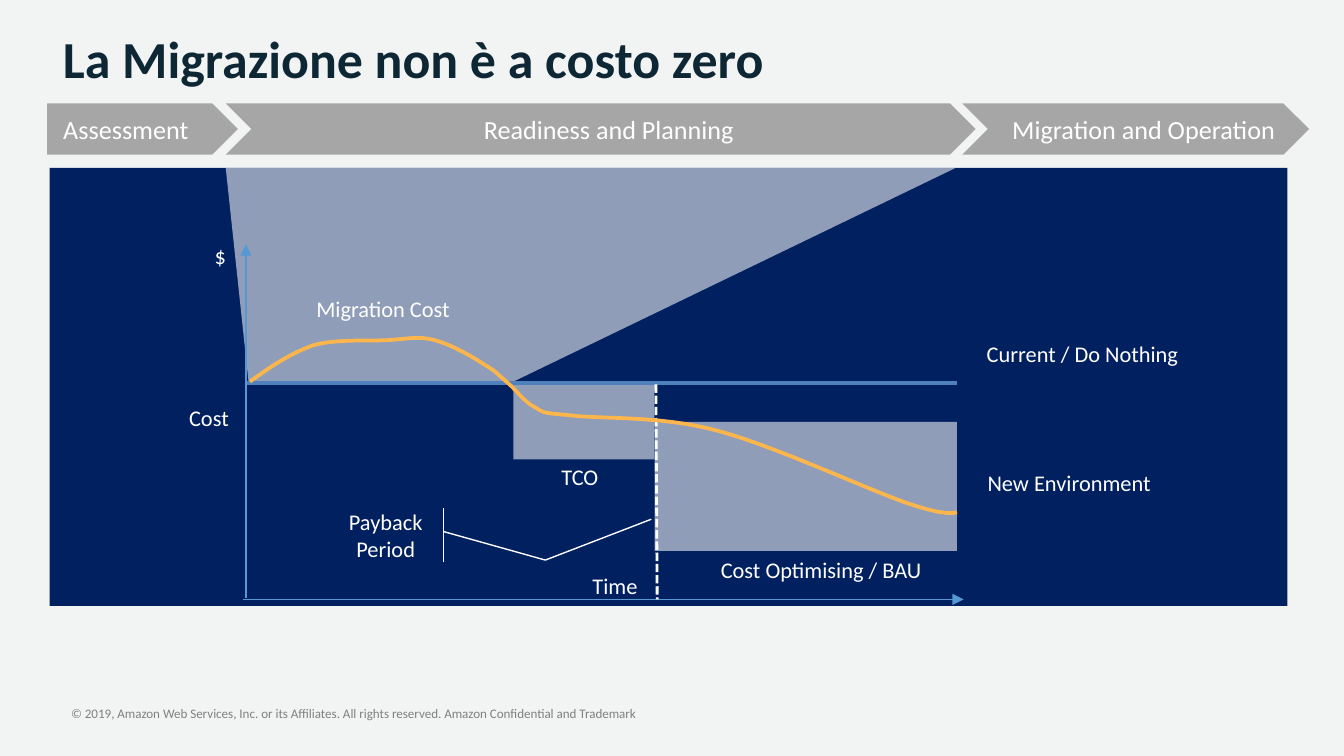
from dataclasses import dataclass

from lxml import etree
from pptx import Presentation
from pptx.dml.color import RGBColor
from pptx.enum.dml import MSO_LINE
from pptx.enum.shapes import MSO_CONNECTOR, MSO_SHAPE
from pptx.enum.text import MSO_ANCHOR, PP_ALIGN
from pptx.oxml.ns import qn
from pptx.util import Inches, Pt

LEFT, CENTER = PP_ALIGN.LEFT, PP_ALIGN.CENTER
TOP, MIDDLE = MSO_ANCHOR.TOP, MSO_ANCHOR.MIDDLE
RECT, PENTAGON, CHEVRON = MSO_SHAPE.RECTANGLE, MSO_SHAPE.PENTAGON, MSO_SHAPE.CHEVRON
CALLOUT = MSO_SHAPE.LINE_CALLOUT_2_ACCENT_BAR
STRAIGHT = MSO_CONNECTOR.STRAIGHT
DASHED = MSO_LINE.SQUARE_DOT
COLUMNS = 100
WIDTH = Inches(10)
CELL = WIDTH // COLUMNS


@dataclass(frozen=True)
class Theme:
    """Colours, type sizes and the font of the slide."""
    font: str = "Calibri"
    back: str = "F2F4F4"
    title: str = "0E2735"
    navy: str = "002060"
    white: str = "FFFFFF"
    stage: str = "A6A6A6"
    axis: str = "5698D3"
    baseline: str = "4F81BD"
    curve: str = "FCB64C"
    footer: str = "808080"
    title_size: float = 27.8
    stage_size: float = 14
    label_size: float = 12
    footer_size: float = 7
    veil: int = 56


T = Theme()


@dataclass(frozen=True)
class Box:
    """A region measured in grid cells."""
    x: float
    y: float
    w: float
    h: float

    def point(self, x, y):
        """Return a point of the region in slide units."""
        return round((self.x + x) * CELL), round((self.y + y) * CELL)

    def area(self, x=0, y=0, w=None, h=None):
        """Return an area of the region in slide units, by default all of it."""
        w, h = w or self.w, h or self.h
        return (*self.point(x, y), round(w * CELL), round(h * CELL))


def write(sp, text, size=T.label_size, color=T.white, bold=False, align=CENTER,
          anchor=TOP, wrap=False, margins=(0.1, 0.05, 0.1, 0.05)):
    """Put formatted text in a shape."""
    tf = sp.text_frame
    tf.word_wrap, tf.vertical_anchor = wrap, anchor
    tf.margin_left, tf.margin_top, tf.margin_right, tf.margin_bottom = map(Inches, margins)
    p = tf.paragraphs[0]
    p.alignment = align
    r = p.add_run()
    r.text = text
    r.font.name, r.font.size, r.font.bold = T.font, Pt(size), bold
    r.font.color.rgb = RGBColor.from_string(color)


def style(sp, fill=None, opacity=None, line=None, width=1):
    """Set the fill and outline of a shape without shadow."""
    sp.shadow.inherit = False
    if fill:
        sp.fill.solid()
        sp.fill.fore_color.rgb = RGBColor.from_string(fill)
        if opacity:
            color = next(sp.fill._xPr.iter(qn("a:srgbClr")))
            etree.SubElement(color, qn("a:alpha"), val=str(opacity * 1000))
    else:
        sp.fill.background()
    if line:
        sp.line.color.rgb = RGBColor.from_string(line)
        sp.line.width = Pt(width)
    else:
        sp.line.fill.background()
    return sp


def add_line(s, start, end, color, width, arrow=False, dash=None):
    """Draw a straight line, with an arrowhead at its end if wanted."""
    c = s.shapes.add_connector(STRAIGHT, *start, *end)
    c.line.color.rgb = RGBColor.from_string(color)
    c.line.width = Pt(width)
    if dash:
        c.line.dash_style = dash
    if arrow:
        etree.SubElement(c.line._get_or_add_ln(), qn("a:tailEnd"), type="triangle")
    etree.SubElement(c._element.spPr, qn("a:effectLst"))


def add_outline(s, points, close):
    """Draw a freeform through the given points."""
    fb = s.shapes.build_freeform(*points[0])
    fb.add_line_segments(points[1:], close=close)
    return fb.convert_to_shape()


def add_curve(s, points, color, width):
    """Draw a Bezier curve from a start and triples of control points."""
    sp = style(add_outline(s, points, False), line=color, width=width)
    steps = list(sp._element.iter(qn("a:lnTo")))
    for i in range(0, len(steps), 3):
        bezier = etree.Element(qn("a:cubicBezTo"))
        steps[i].addprevious(bezier)
        for step in steps[i:i + 3]:
            bezier.append(step[0])
            step.getparent().remove(step)


def add_title(s, box):
    """Write the heading."""
    write(s.shapes.add_textbox(*box.area()), "La Migrazione non è a costo zero",
          size=T.title_size, color=T.title, bold=True, align=LEFT, anchor=MIDDLE, wrap=True)


def add_stages(s, box):
    """Draw the row of migration stages."""
    stages = [
        ("Assessment", PENTAGON, 0, 14.2, LEFT, 0.12),
        ("Readiness and Planning", CHEVRON, 13.3, 55.8, CENTER, 0.22),
        ("Migration and Operation", CHEVRON, 68.1, 25.8, CENTER, 0.22),
    ]
    for text, kind, x, w, align, inset in stages:
        sp = style(s.shapes.add_shape(kind, *box.area(x, 0, w)), fill=T.stage)
        write(sp, text, size=T.stage_size, align=align, anchor=MIDDLE,
              margins=(inset, 0.05, 0.1, 0.05))


def add_areas(s, box):
    """Draw the panel and its translucent areas."""
    style(s.shapes.add_shape(RECT, *box.area()), fill=T.navy)
    funnel = [box.point(*xy) for xy in [(13.1, 0), (67.4, 0), (34.5, 15.9), (14.8, 15.9)]]
    areas = [add_outline(s, funnel, True)]
    for area in [(34.5, 16.1, 10.5, 5.6), (45, 18.9, 22.5, 9.6)]:
        areas.append(s.shapes.add_shape(RECT, *box.area(*area)))
    for sp in areas:
        style(sp, fill=T.white, opacity=T.veil)


def add_lines(s, box):
    """Draw the axes, the current cost, the payback date and the cost curve."""
    at = box.point
    add_line(s, at(14.6, 32), at(14.6, 5.7), T.axis, 0.75, arrow=True)
    add_line(s, at(14.4, 32.1), at(68, 32.1), T.axis, 0.75, arrow=True)
    add_line(s, at(14.7, 16), at(67.5, 16), T.baseline, 2)
    add_line(s, at(45.1, 16.1), at(45.2, 32.1), T.white, 1.5, dash=DASHED)
    curve = [
        (14.9, 15.9),
        (16.4, 14.8), (17.9, 13.8), (19.6, 13.2),
        (21.3, 12.7), (23.8, 12.9), (25.3, 12.8),
        (26.8, 12.7), (27.4, 12.5), (28.6, 12.8),
        (29.8, 13.1), (31.4, 14), (32.3, 14.6),
        (33.2, 15.1), (33.5, 15.5), (34.1, 16),
        (34.8, 16.6), (35.3, 17.4), (36.1, 17.8),
        (36.8, 18.2), (36.4, 18.2), (38.7, 18.4),
        (40.9, 18.7), (45.3, 18.4), (49.5, 19.5),
        (53.8, 20.6), (61, 24), (64, 25),
        (67, 26), (67.5, 25.6), (67.5, 25.6),
    ]
    add_curve(s, [at(*xy) for xy in curve], T.curve, 2)


def add_labels(s, box):
    """Write the chart labels and the payback callout."""
    labels = [
        ("$", 11.2, 5, 3),
        ("Migration Cost", 18.2, 9, 13.2),
        ("Current / Do Nothing", 67.4, 12.3, 18.9),
        ("Cost", 9.1, 17.1, 5.5),
        ("TCO", 36.8, 21.5, 5.3),
        ("New Environment", 67.9, 21.9, 15.9),
        ("Cost Optimising / BAU", 47.8, 28.4, 19.2),
        ("Time", 39.1, 29.6, 5.9),
    ]
    for text, x, y, w in labels:
        write(s.shapes.add_textbox(*box.area(x, y, w, 3)), text)
    sp = style(s.shapes.add_shape(CALLOUT, *box.area(19.6, 25.3, 10.8, 4)),
               line=T.white, width=0.75)
    for i, share in enumerate([0.44, 0.9, 0.97, 1.6, 0.21, 2.33]):
        sp.adjustments[i] = share
    write(sp, "Payback Period", anchor=MIDDLE, wrap=True)


def add_footer(s, box):
    """Write the copyright line."""
    write(s.shapes.add_textbox(*box.area()),
          "© 2019, Amazon Web Services, Inc. or its Affiliates. All rights reserved. "
          "Amazon Confidential and Trademark",
          size=T.footer_size, color=T.footer, align=LEFT, wrap=True, margins=(0, 0, 0, 0))


def main():
    """Build and save the slide."""
    prs = Presentation()
    prs.slide_width, prs.slide_height = WIDTH, WIDTH * 9 // 16
    s = prs.slides.add_slide(prs.slide_layouts[6])
    s.background.fill.solid()
    s.background.fill.fore_color.rgb = RGBColor.from_string(T.back)
    panel = Box(3.7, 12.5, 92.1, 32.6)
    add_title(s, Box(3.7, 1.3, 89.7, 6))
    add_stages(s, Box(3.5, 7.7, 93.9, 3.8))
    add_areas(s, panel)
    add_lines(s, panel)
    add_labels(s, panel)
    add_footer(s, Box(5.3, 52.5, 48.6, 1.2))
    prs.save("out.pptx")


if __name__ == "__main__":
    main()
